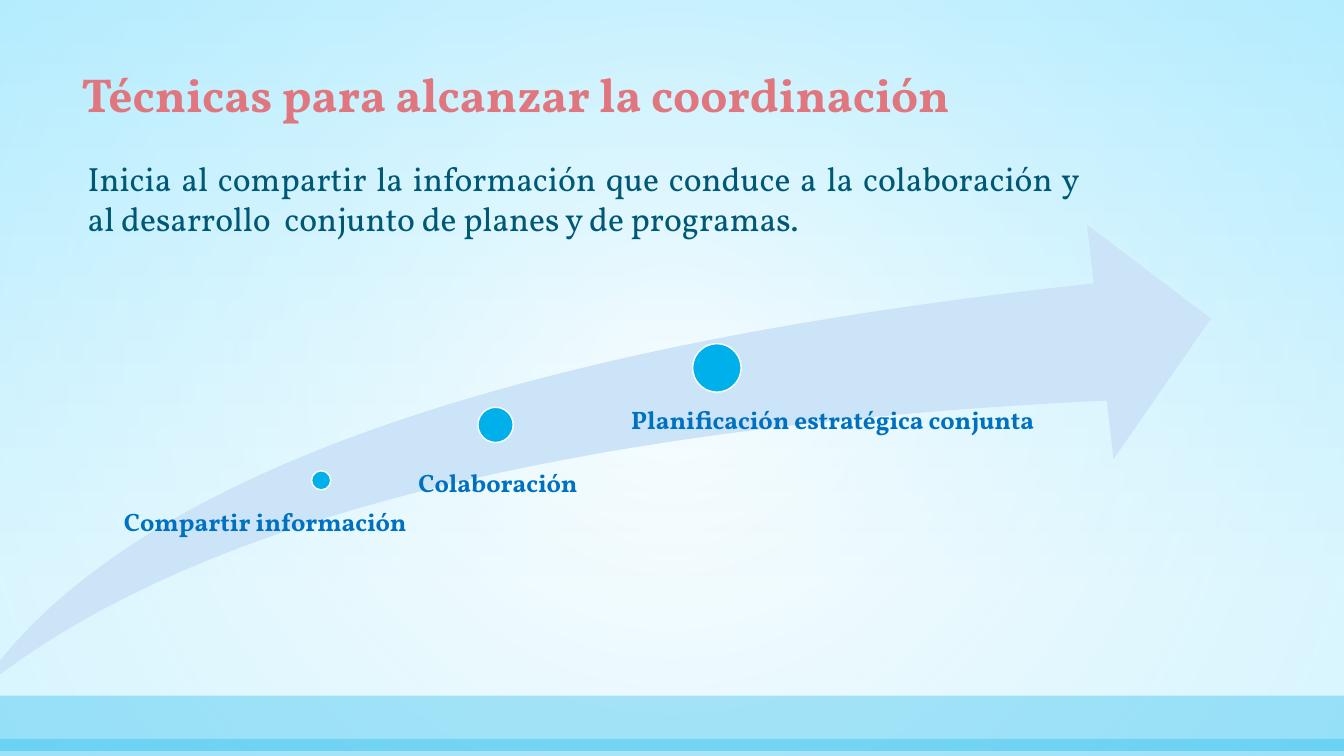
from lxml import etree
from pptx import Presentation
from pptx.dml.color import RGBColor
from pptx.enum.shapes import MSO_SHAPE as SHAPE
from pptx.enum.text import MSO_ANCHOR as ANCHOR, PP_ALIGN as ALIGN
from pptx.oxml.ns import nsdecls, qn
from pptx.oxml import parse_xml
from pptx.util import Inches, Pt

WHITE = RGBColor(0xFF, 0xFF, 0xFF)
SKY = RGBColor(0xC8, 0xF1, 0xFF)
AQUA = RGBColor(0x91, 0xE4, 0xFF)
CYAN = RGBColor(0x00, 0xB0, 0xEA)
PALE_BLUE = RGBColor(0xCC, 0xE4, 0xF7)
TEAL = RGBColor(0x00, 0x58, 0x75)
BLUE = RGBColor(0x00, 0x70, 0xC0)
CORAL = RGBColor(0xE0, 0x76, 0x7E)

LINEAR = '<a:lin ang="5400000" scaled="0"/>'
RADIAL = '<a:path path="circle"><a:fillToRect l="50000" t="50000" r="50000" b="50000"/></a:path>'


class SlideBuilder:
    font = "Vollkorn"

    def __init__(self, prs):
        self.slide = prs.slides.add_slide(prs.slide_layouts[6])

    @staticmethod
    def gradient(parent, stops, direction):
        """Replace the solid fill in parent; stops are (position %, colour, opacity %)."""
        marks = "".join(
            f'<a:gs pos="{pos * 1000}"><a:srgbClr val="{color}">'
            f'<a:alpha val="{alpha * 1000}"/></a:srgbClr></a:gs>'
            for pos, color, alpha in stops)
        xml = (f'<a:gradFill {nsdecls("a")} rotWithShape="1">'
               f'<a:gsLst>{marks}</a:gsLst>{direction}</a:gradFill>')
        solid = parent.find(qn("a:solidFill"))
        parent.replace(solid, parse_xml(xml))

    def background(self, stops):
        fill = self.slide.background.fill
        fill.solid()
        fill.fore_color.rgb = WHITE
        bg_pr = self.slide.element.find(".//" + qn("p:bgPr"))
        self.gradient(bg_pr, stops, LINEAR)

    def shape(self, kind, box, color, line=None, alpha=None):
        sp = self.slide.shapes.add_shape(kind, *map(Inches, box))
        sp.shadow.inherit = False
        sp.fill.solid()
        sp.fill.fore_color.rgb = color
        if line is None:
            sp.line.fill.background()
        else:
            sp.line.color.rgb = line
            sp.line.width = Pt(1)
        if alpha is not None:
            clr = sp._element.spPr.find(qn("a:solidFill")).find(qn("a:srgbClr"))
            etree.SubElement(clr, qn("a:alpha")).set("val", str(alpha * 1000))
        return sp

    def text(self, box, words, size, color, bold=False, frame=None, para=None):
        sp = self.slide.shapes.add_textbox(*map(Inches, box))
        tf = sp.text_frame
        p = tf.paragraphs[0]
        r = p.add_run()
        r.text = words
        r.font.color.rgb = color
        formats = (
            (tf, {"word_wrap": True, **(frame or {})}),
            (p, para or {}),
            (r.font, {"name": self.font, "size": Pt(size), "bold": bold}),
        )
        for target, values in formats:
            for name, value in values.items():
                setattr(target, name, value)

    def milestone(self, dot, label, inset, words):
        left, top, size = dot
        self.shape(SHAPE.OVAL, (left, top, size, size), CYAN, line=WHITE)
        frame = {"margin_left": Inches(inset), "margin_top": 0,
                 "margin_right": 0, "margin_bottom": 0}
        self.text(label, words, 18, BLUE, True, frame, {"line_spacing": 0.9})


def main():
    prs = Presentation()
    prs.slide_width, prs.slide_height = Inches(13.33), Inches(7.5)
    page = SlideBuilder(prs)

    page.background([(0, SKY, 56), (79, WHITE, 100)])
    glow = page.shape(SHAPE.RECTANGLE, (0, 0, 13.33, 7.5), WHITE)
    page.gradient(glow._element.spPr, [(0, WHITE, 49), (100, AQUA, 35)], RADIAL)
    for top, height, alpha in ((6.9, 0.55, 30), (7.33, 0.17, 28)):
        page.shape(SHAPE.RECTANGLE, (0, top, 13.33, height), CYAN, alpha=alpha)

    page.text((0.37, 1.42, 10.43, 0.95),
              "Inicia al compartir la información que conduce a la colaboración y "
              "al desarrollo  conjunto de planes y de programas.", 24, TEAL,
              frame={"vertical_anchor": ANCHOR.MIDDLE, "margin_left": Inches(0.5),
                     "margin_top": Inches(0.14), "margin_bottom": 0},
              para={"alignment": ALIGN.JUSTIFY})

    swoosh = page.shape(SHAPE.SWOOSH_ARROW, (-0.24, 2.23, 12.25, 4.65), PALE_BLUE)
    swoosh.adjustments[0] = swoosh.adjustments[1] = 0.25

    milestones = (
        ((3.09, 4.67, 0.19), (1.13, 5.06, 2.94, 0.56), 0.1, "Compartir información"),
        ((4.74, 4.04, 0.35), (3.96, 4.67, 2.61, 1.11), 0.19, "Colaboración"),
        ((6.87, 3.41, 0.48), (6, 4.04, 4.61, 0.71), 0.26,
         "Planificación estratégica conjunta"),
    )
    for milestone in milestones:
        page.milestone(*milestone)

    page.text((0.71, 0.6, 9.31, 0.67), "Técnicas para alcanzar la coordinación",
              34, CORAL, bold=True)
    prs.save("out.pptx")


if __name__ == "__main__":
    main()
